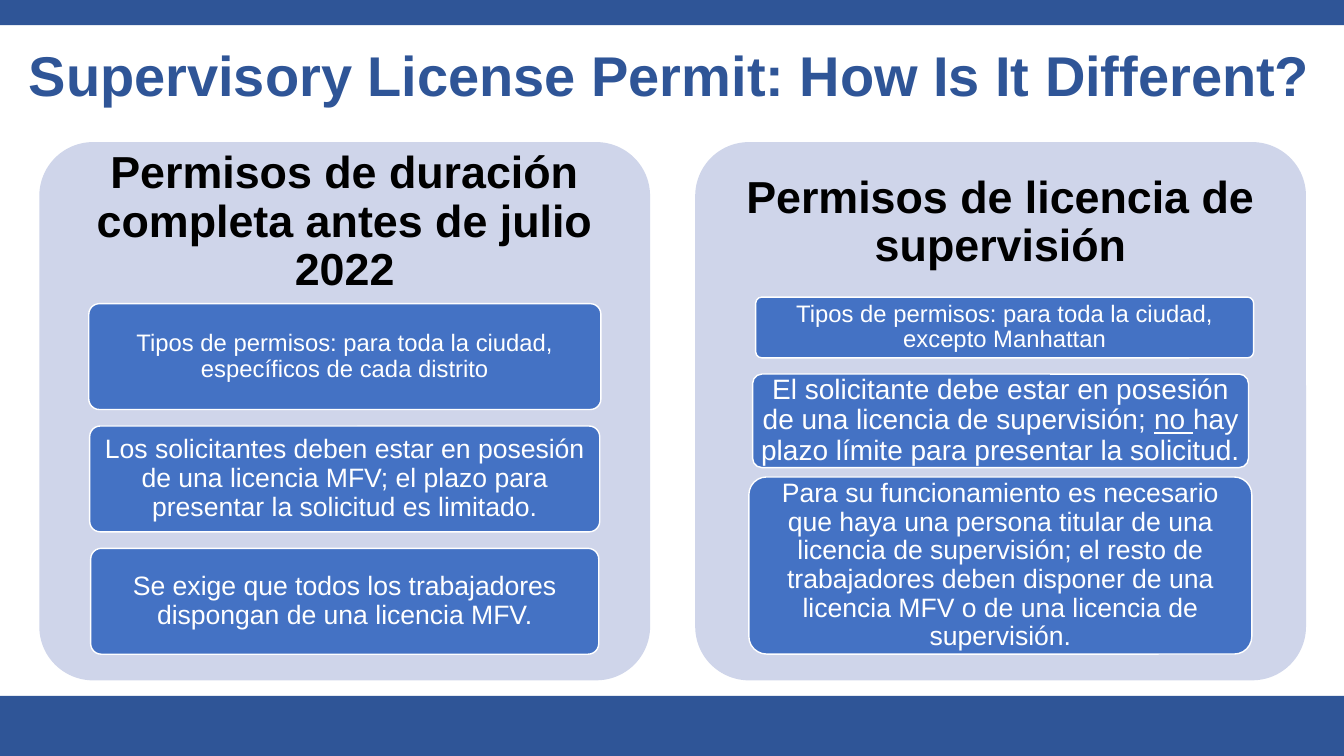
from pptx import Presentation
from pptx.dml.color import RGBColor
from pptx.enum.shapes import MSO_SHAPE
from pptx.enum.text import MSO_ANCHOR, PP_ALIGN
from pptx.util import Pt

NAVY = RGBColor(0x2F, 0x55, 0x97)
BLUE = RGBColor(0x44, 0x72, 0xC4)
PALE = RGBColor(0xCF, 0xD5, 0xEA)
WHITE = RGBColor(0xFF, 0xFF, 0xFF)
BLACK = RGBColor(0, 0, 0)

WIDTH, HEIGHT = 960, 540
PANEL_TOP, PANEL_W, PANEL_H = 101.5, 436.3, 384.5
HEADING_H = 115.2

PANELS = [
    (28.1, "Permisos de duración completa antes de julio 2022", [
        ((35.3, 115.4, 365.8, 75.6), 17,
         ["Tipos de permisos: para toda la ciudad, específicos de cada distrito"]),
        ((36, 202.8, 364.3, 75.6), 19,
         ["Los solicitantes deben estar en posesión de una licencia MFV; "
          "el plazo para presentar la solicitud es limitado."]),
        ((36.7, 290.2, 362.9, 75.6), 19,
         ["Se exige que todos los trabajadores dispongan de una licencia MFV."]),
    ]),
    (496.6, "Permisos de licencia de supervisión", [
        ((43.2, 110.7, 355.7, 43.4), 17,
         ["Tipos de permisos: para toda la ciudad, excepto Manhattan"]),
        ((41, 165.7, 354.2, 66.8), 20,
         ["El solicitante debe estar en posesión de una licencia de supervisión; ",
          "no ", "hay plazo límite para presentar la solicitud."]),
        ((38.3, 239.2, 359.3, 126.5), 19,
         ["Para su funcionamiento es necesario que haya una persona titular de una "
          "licencia de supervisión; el resto de trabajadores deben disponer de una "
          "licencia MFV o de una licencia de supervisión."]),
    ]),
]


def add_block(s, kind, box, fill, line=None):
    """Add a filled preset shape without shadow."""
    sp = s.shapes.add_shape(kind, *map(Pt, box))
    sp.shadow.inherit = False
    sp.fill.solid()
    sp.fill.fore_color.rgb = fill
    if line is None:
        sp.line.fill.background()
    else:
        sp.line.color.rgb = line
        sp.line.width = Pt(1)
    if kind == MSO_SHAPE.ROUNDED_RECTANGLE:
        sp.adjustments[0] = 0.1
    return sp


def write(sp, texts, size, color, inset, bold=False):
    """Write centred runs into a shape, underlining the second one."""
    tf = sp.text_frame
    tf.word_wrap = True
    tf.vertical_anchor = MSO_ANCHOR.MIDDLE
    tf.margin_left = tf.margin_right = Pt(inset[0])
    tf.margin_top = tf.margin_bottom = Pt(inset[1])
    p = tf.paragraphs[0]
    p.alignment = PP_ALIGN.CENTER
    p.line_spacing = 0.9
    for i, text in enumerate(texts):
        r = p.add_run()
        r.text = text
        r.font.name = "Arial"
        r.font.size = Pt(size)
        r.font.bold = bold
        r.font.underline = i == 1
        r.font.color.rgb = color


def add_frame(s):
    """Add the bars along the top and bottom edges."""
    for top, height in ((0, 18), (HEIGHT - 43, 43)):
        add_block(s, MSO_SHAPE.RECTANGLE, (0, top, WIDTH, height), NAVY)


def add_title(s, box):
    """Add the slide title in the given box."""
    sp = s.shapes.add_textbox(*map(Pt, box))
    write(sp, ["Supervisory License Permit: How Is It Different?"],
          40, NAVY, (7.2, 3.6), bold=True)


def add_panel(s, box, heading, cards):
    """Add a panel with its heading and cards placed from its corner."""
    left, top, width, _ = box
    add_block(s, MSO_SHAPE.ROUNDED_RECTANGLE, box, PALE)
    sp = s.shapes.add_textbox(*map(Pt, (left, top, width, HEADING_H)))
    write(sp, [heading], 32, BLACK, (9.6, 9.6), bold=True)
    for (dx, dy, w, h), size, texts in cards:
        card = add_block(s, MSO_SHAPE.ROUNDED_RECTANGLE,
                         (left + dx, top + dy, w, h), BLUE, WHITE)
        write(card, texts, size, WHITE, (3.6, 2.7))


def main():
    """Build and save the slide."""
    prs = Presentation()
    prs.slide_width, prs.slide_height = Pt(WIDTH), Pt(HEIGHT)
    s = prs.slides.add_slide(prs.slide_layouts[6])
    add_frame(s)
    add_title(s, (-9.4, 28.8, 974.9, 54))
    for left, heading, cards in PANELS:
        add_panel(s, (left, PANEL_TOP, PANEL_W, PANEL_H), heading, cards)
    prs.save("out.pptx")


if __name__ == "__main__":
    main()
